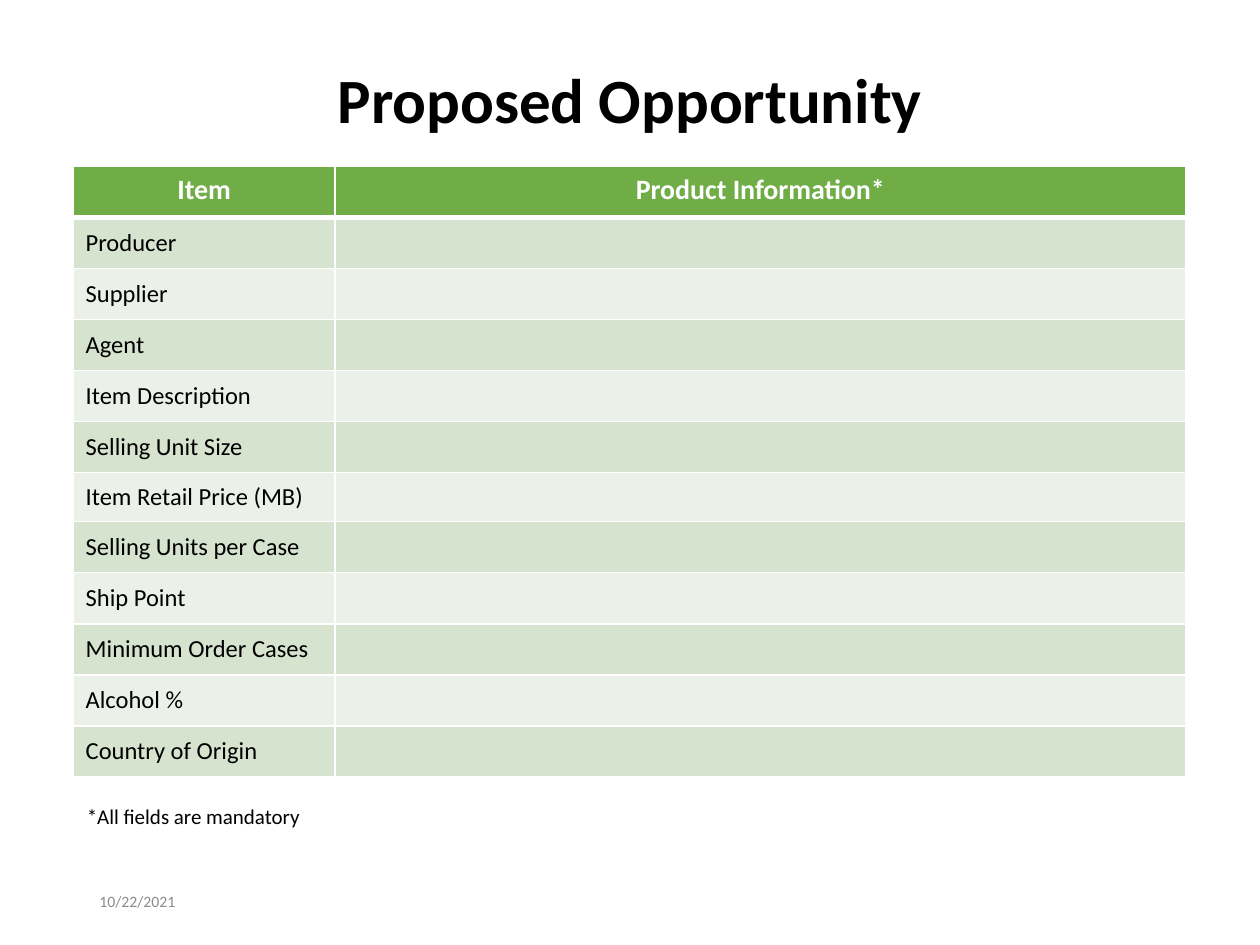
from lxml import etree
from pptx import Presentation
from pptx.dml.color import RGBColor
from pptx.enum.text import MSO_ANCHOR, MSO_AUTO_SIZE, PP_ALIGN
from pptx.oxml.ns import qn
from pptx.util import Inches, Pt

CENTER, LEFT = PP_ALIGN.CENTER, PP_ALIGN.LEFT
TOP, MIDDLE = MSO_ANCHOR.TOP, MSO_ANCHOR.MIDDLE
NO_AUTOFIT, GROW = MSO_AUTO_SIZE.NONE, MSO_AUTO_SIZE.SHAPE_TO_FIT_TEXT
TITLE_ONLY = 5
FONT = "Calibri"
COLORS = {
    "text": "000000",
    "date": "8C8C8C",
    "white": "FFFFFF",
    "header": "70AD47",
    "odd": "D5E3CF",
    "even": "EBF1E9",
}

HEADINGS = ["Item", "Product Information*"]
PRICE = "Item Retail Price (MB)"
FIELDS = [
    "Producer", "Supplier", "Agent", "Item Description", "Selling Unit Size",
    PRICE, "Selling Units per Case", "Ship Point", "Minimum Order Cases",
    "Alcohol %", "Country of Origin",
]
COLUMN_WIDTHS = [2.08, 6.75]
TABLE_HEIGHT, PRICE_HEIGHT = 4.85, 0.39


def rgb(name):
    return RGBColor.from_string(COLORS[name])


def write(frame, text, size, color="text", bold=False, align=LEFT):
    paragraph = frame.paragraphs[0]
    paragraph.alignment = align
    run = paragraph.add_run()
    run.text = text
    run.font.name = FONT
    run.font.size = Pt(size)
    run.font.bold = bold
    run.font.color.rgb = rgb(color)
    return paragraph


def add_title(slide, text):
    title = slide.shapes.title
    title.left, title.top = Inches(0.69), Inches(0.4)
    title.width, title.height = Inches(8.62), Inches(0.84)
    frame = title.text_frame
    frame.auto_size = NO_AUTOFIT
    frame.vertical_anchor = MIDDLE
    write(frame, text, 36, bold=True, align=CENTER).line_spacing = 0.9


def add_label(slide, box, text, size, color="text", anchor=TOP, wrap=True,
              auto_size=NO_AUTOFIT):
    label = slide.shapes.add_textbox(*map(Inches, box))
    frame = label.text_frame
    frame.word_wrap = wrap
    frame.auto_size = auto_size
    frame.vertical_anchor = anchor
    write(frame, text, size, color)


def style_cell(cell, fill, bottom_width=1, top_width=1):
    # Borders come before the fill in the cell properties
    properties = cell._tc.get_or_add_tcPr()
    widths = {"a:lnL": 1, "a:lnR": 1, "a:lnT": top_width, "a:lnB": bottom_width}
    for tag, width in widths.items():
        border = etree.SubElement(properties, qn(tag), w=str(Pt(width)))
        solid = etree.SubElement(border, qn("a:solidFill"))
        etree.SubElement(solid, qn("a:srgbClr"), val=COLORS["white"])
    cell.fill.solid()
    cell.fill.fore_color.rgb = rgb(fill)


def add_product_table(slide):
    table = slide.shapes.add_table(
        len(FIELDS) + 1, len(HEADINGS), Inches(0.58), Inches(1.32),
        Inches(sum(COLUMN_WIDTHS)), Inches(TABLE_HEIGHT)).table
    for column, width in zip(table.columns, COLUMN_WIDTHS):
        column.width = Inches(width)
    row_height = Inches((TABLE_HEIGHT - PRICE_HEIGHT) / len(FIELDS))
    for row in table.rows:
        row.height = row_height
    table.rows[FIELDS.index(PRICE) + 1].height = Inches(PRICE_HEIGHT)

    # Header row
    for column, heading in enumerate(HEADINGS):
        cell = table.cell(0, column)
        style_cell(cell, "header", bottom_width=3)
        write(cell.text_frame, heading, 16, "white", bold=True, align=CENTER)

    # One banded row per field, with an empty cell to fill in
    for row, field in enumerate(FIELDS, start=1):
        for column in range(len(HEADINGS)):
            cell = table.cell(row, column)
            style_cell(cell, "odd" if row % 2 else "even",
                       top_width=3 if row == 1 else 1)
            cell.vertical_anchor = MIDDLE
            cell.margin_top = cell.margin_bottom = Inches(0.04)
        write(table.cell(row, 0).text_frame, field, 14)


def main():
    presentation = Presentation()
    presentation.slide_width, presentation.slide_height = Inches(10), Inches(7.5)
    slide = presentation.slides.add_slide(presentation.slide_layouts[TITLE_ONLY])

    add_title(slide, "Proposed Opportunity")
    add_label(slide, (0.69, 6.95, 2.25, 0.4), "10/22/2021", 9, "date", MIDDLE)
    add_product_table(slide)
    add_label(slide, (0.59, 6.33, 1.91, 0.3), "*All fields are mandatory", 12,
              wrap=False, auto_size=GROW)

    presentation.save("out.pptx")


if __name__ == "__main__":
    main()
